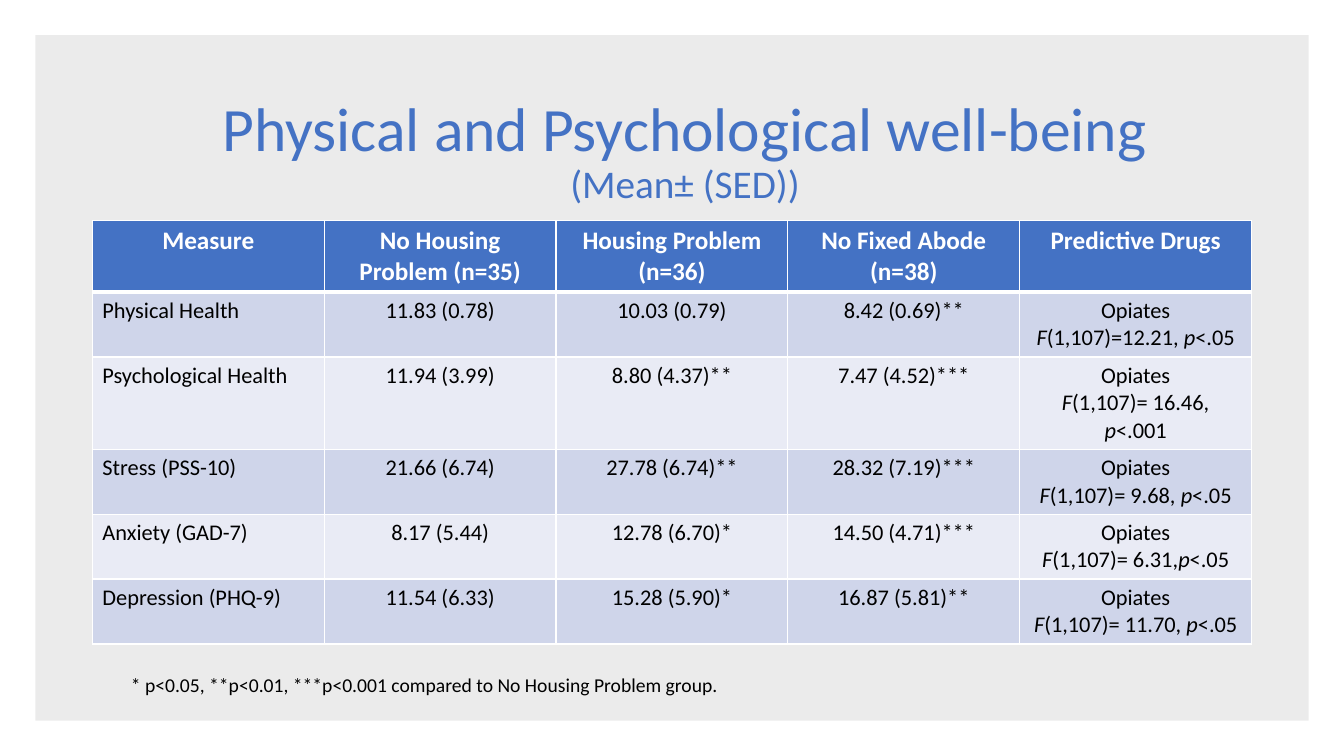
from lxml import etree
from pptx import Presentation
from pptx import util as u
from pptx.dml.color import RGBColor
from pptx.enum import shapes, text
from pptx.oxml import ns

COLOURS = {
    "blue": "4472C4",
    "white": "FFFFFF",
    "black": "000000",
    "dark band": "CFD5EA",
    "light band": "E9EBF5",
}
HEADINGS = [
    "Measure",
    "No Housing Problem (n=35)",
    "Housing Problem (n=36)",
    "No Fixed Abode\n(n=38)",
    "Predictive Drugs",
]
MEASURES = [
    ["Physical Health", "11.83 (0.78)", "10.03 (0.79)", "8.42 (0.69)**", "=12.21, _p_<.05"],
    ["Psychological Health", "11.94 (3.99)", "8.80 (4.37)**", "7.47 (4.52)***", "= 16.46, _p_<.001"],
    ["Stress (PSS-10)", "21.66 (6.74)", "27.78 (6.74)**", "28.32 (7.19)***", "= 9.68, _p_<.05"],
    ["Anxiety (GAD-7)", "8.17 (5.44)", "12.78 (6.70)*", "14.50 (4.71)***", "= 6.31,_p_<.05"],
    ["Depression (PHQ-9)", "11.54 (6.33)", "15.28 (5.90)*", "16.87 (5.81)**", "= 11.70, _p_<.05"],
]


def colour(name):
    return RGBColor.from_string(COLOURS[name])


def points(*lengths):
    return [u.Pt(length) for length in lengths]


class Slide:
    font = "Calibri"

    def __init__(self, deck):
        self.page = deck.slides.add_slide(deck.slide_layouts[5])

    def apply(self, target, values):
        for name, value in values.items():
            setattr(target, name, value)

    def span(self, para, words, size, ink, **formats):
        span = para.add_run()
        span.text = words
        self.apply(span.font, {"name": self.font, "size": u.Pt(size), **formats})
        span.font.color.rgb = colour(ink)

    def lines(self, frame, words, size, ink, align, bold=False):
        for index, line in enumerate(words.split("\n")):
            para = frame.add_paragraph() if index else frame.paragraphs[0]
            para.alignment = align
            for position, part in enumerate(line.split("_")):
                if part:
                    self.span(para, part, size, ink, bold=bold, italic=position % 2 == 1)

    def title(self, place, main, detail):
        box = self.page.shapes.title
        self.apply(box, dict(zip(("left", "top", "width", "height"), points(*place))))
        self.apply(box.text_frame, {
            "word_wrap": True,
            "auto_size": text.MSO_AUTO_SIZE.NONE,
            "vertical_anchor": text.MSO_ANCHOR.MIDDLE,
        })
        para = box.text_frame.paragraphs[0]
        self.apply(para, {"alignment": text.PP_ALIGN.CENTER, "line_spacing": 0.9})
        self.span(para, main, 44, "blue")
        para.add_line_break()
        self.span(para, detail, 28, "blue")

    def panel(self, place, ink, opacity):
        box = self.page.shapes.add_shape(shapes.MSO_SHAPE.RECTANGLE, *points(*place))
        box.shadow.inherit = False
        box.line.fill.background()
        box.fill.solid()
        box.fill.fore_color.rgb = colour(ink)
        shade = box.element.spPr.find(ns.qn("a:solidFill"))[0]
        etree.SubElement(shade, ns.qn("a:alpha"), val=str(opacity * 1000))
        self.page.shapes.title.element.addprevious(box.element)

    def borders(self, cell, widths):
        properties = cell._tc.get_or_add_tcPr()
        for side, width in zip("LRTB", widths):
            line = etree.SubElement(properties, ns.qn("a:ln" + side), w=str(u.Pt(width)))
            fill = etree.SubElement(line, ns.qn("a:solidFill"))
            etree.SubElement(fill, ns.qn("a:srgbClr"), val=COLOURS["white"])

    def table(self, place, rows):
        table = self.page.shapes.add_table(len(rows), len(rows[0]), *points(*place)).table
        for row, entries in enumerate(rows):
            header = row == 0
            band = "blue" if header else "dark band" if row % 2 else "light band"
            size, ink = (18, "white") if header else (16, "black")
            for column, words in enumerate(entries):
                cell = table.cell(row, column)
                centred = header or column
                align = text.PP_ALIGN.CENTER if centred else text.PP_ALIGN.LEFT
                self.borders(cell, (1, 1, 3 if row == 1 else 1, 3 if header else 1))
                cell.fill.solid()
                cell.fill.fore_color.rgb = colour(band)
                self.lines(cell.text_frame, words, size, ink, align, bold=header)

    def note(self, place, words):
        box = self.page.shapes.add_textbox(*points(*place))
        self.apply(box.text_frame, {
            "word_wrap": True,
            "auto_size": text.MSO_AUTO_SIZE.SHAPE_TO_FIT_TEXT,
        })
        self.lines(box.text_frame, words, 14, "black", text.PP_ALIGN.LEFT)


def main():
    deck = Presentation()
    deck.slide_width, deck.slide_height = points(960, 540)
    slide = Slide(deck)
    slide.panel((25.2, 25.2, 909.6, 489.6), "black", 8)
    slide.title((44, 60, 890.6, 97.8), "Physical and Psychological well-being", "(Mean± (SED))")
    results = [[*entries, "Opiates\n_F_(1,107)" + statistic] for *entries, statistic in MEASURES]
    slide.table((66, 157.5, 828, 175.2), [HEADINGS, *results])
    slide.note((86.4, 477.4, 763.2, 24.2),
               "* p<0.05, **p<0.01, ***p<0.001 compared to No Housing Problem group.")
    deck.save("out.pptx")


if __name__ == "__main__":
    main()
